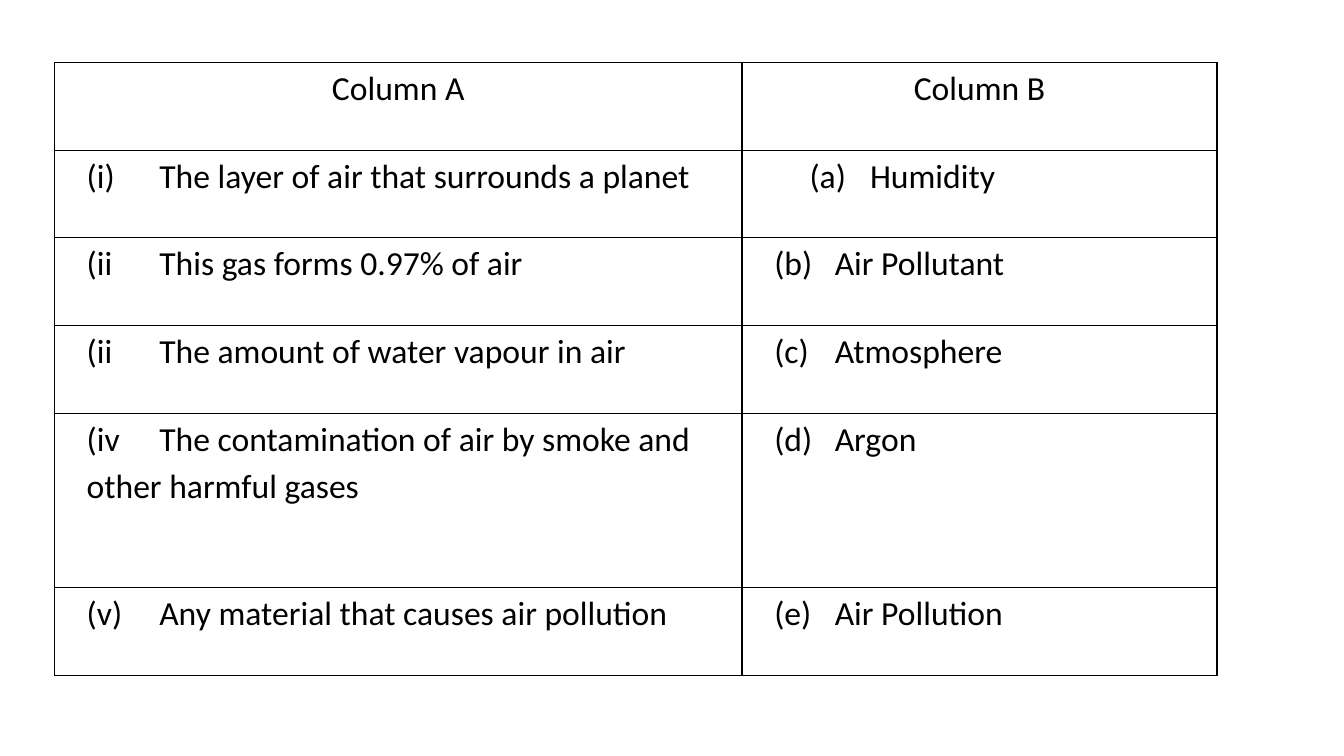
from dataclasses import dataclass

from lxml.etree import SubElement
from pptx import Presentation
from pptx.dml.color import RGBColor
from pptx.enum.text import PP_ALIGN
from pptx.oxml.ns import qn
from pptx.util import Inches, Pt


@dataclass(frozen=True)
class Theme:
    font: str = "Calibri"
    size: int = 24
    ink: str = "000000"
    border_width: float = 1
    line_spacing: float = 1.15
    space_after: int = 10
    cell_margin: float = 0.07
    item_margin: float = 0.32


HEADINGS = ("Column A", "Column B")
ITEMS = [
    ("(i)\tThe layer of air that surrounds a planet", "(a)\tHumidity"),
    ("(ii\tThis gas forms 0.97% of air", "(b)\tAir Pollutant"),
    ("(ii\tThe amount of water vapour in air", "(c)\tAtmosphere"),
    ("(iv\tThe contamination of air by smoke and other harmful gases", "(d)\tArgon"),
    ("(v)\tAny material that causes air pollution", "(e)\tAir Pollution"),
]
COLUMN_WIDTHS = (6.82, 4.71)
LABEL_TABS = (0.72, 0.6)
ROW_HEIGHT = 0.87
TALL_ROW, TALL_HEIGHT = 4, 1.73
FIRST_ANSWER_MARGIN = 0.67


def write_text(text_frame, text, theme, align=PP_ALIGN.LEFT, tab=None):
    """Write one paragraph; tab is the stop, in inches, after its label."""
    paragraph = text_frame.paragraphs[0]
    paragraph.alignment = align
    paragraph.line_spacing = theme.line_spacing
    paragraph.space_after = Pt(theme.space_after)
    if tab:
        tab_list = SubElement(paragraph._p.get_or_add_pPr(), qn("a:tabLst"))
        SubElement(tab_list, qn("a:tab"), pos=str(Inches(tab)), algn="l")
    run = paragraph.add_run()
    run.text = text
    run.font.name = theme.font
    run.font.size = Pt(theme.size)
    run.font.color.rgb = RGBColor.from_string(theme.ink)


class SlideBuilder:
    def __init__(self, slide, theme):
        self.slide = slide
        self.theme = theme

    def table(self, left, top, widths, heights):
        table = self.slide.shapes.add_table(
            len(heights), len(widths), Inches(left), Inches(top),
            Inches(sum(widths)), Inches(sum(heights))).table
        table.first_row = table.horz_banding = False
        for column, width in zip(table.columns, widths):
            column.width = Inches(width)
        for row, height in zip(table.rows, heights):
            row.height = Inches(height)
        return table

    def cell(self, cell, text, margin, **text_format):
        cell.margin_left = Inches(margin)
        cell.margin_right = Inches(self.theme.cell_margin)
        cell.margin_top = cell.margin_bottom = 0
        self.borders(cell)
        cell.fill.background()
        write_text(cell.text_frame, text, self.theme, **text_format)

    def borders(self, cell):
        properties = cell._tc.get_or_add_tcPr()
        for side in ("lnL", "lnR", "lnT", "lnB"):
            line = SubElement(properties, qn(f"a:{side}"),
                              w=str(Pt(self.theme.border_width)))
            fill = SubElement(line, qn("a:solidFill"))
            SubElement(fill, qn("a:srgbClr"), val=self.theme.ink)


def main():
    presentation = Presentation()
    presentation.slide_width = Inches(13.33)
    presentation.slide_height = Inches(7.5)
    slide = presentation.slides.add_slide(presentation.slide_layouts[6])
    theme = Theme()
    builder = SlideBuilder(slide, theme)

    heights = [ROW_HEIGHT] * (len(ITEMS) + 1)
    heights[TALL_ROW] = TALL_HEIGHT
    table = builder.table(0.54, 0.62, COLUMN_WIDTHS, heights)

    for column, heading in enumerate(HEADINGS):
        builder.cell(table.cell(0, column), heading, theme.cell_margin,
                     align=PP_ALIGN.CENTER)
    for row, pair in enumerate(ITEMS, start=1):
        for column, text in enumerate(pair):
            first_answer = (row, column) == (1, 1)
            margin = FIRST_ANSWER_MARGIN if first_answer else theme.item_margin
            builder.cell(table.cell(row, column), text, margin,
                         tab=LABEL_TABS[column])

    presentation.save("out.pptx")


if __name__ == "__main__":
    main()
